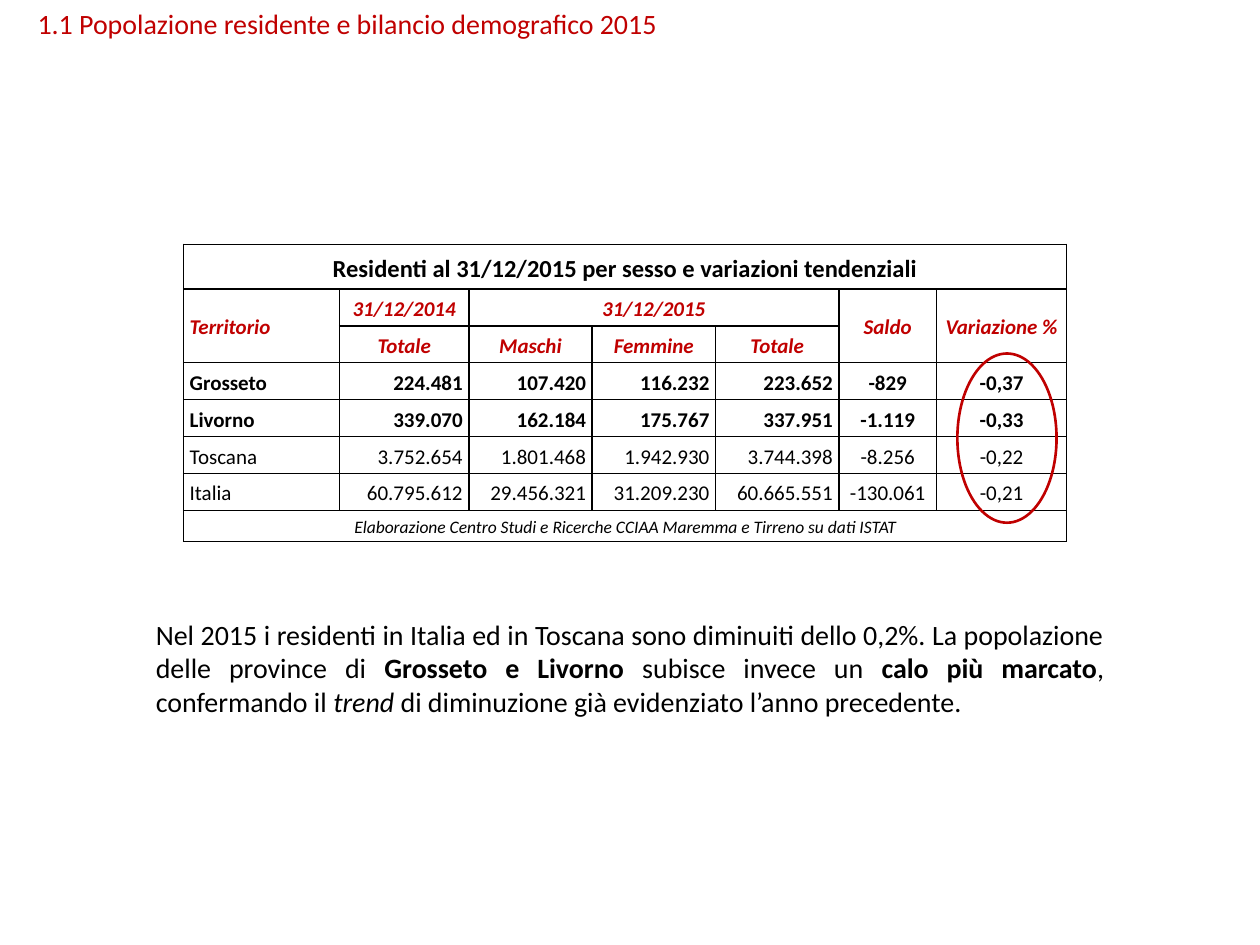
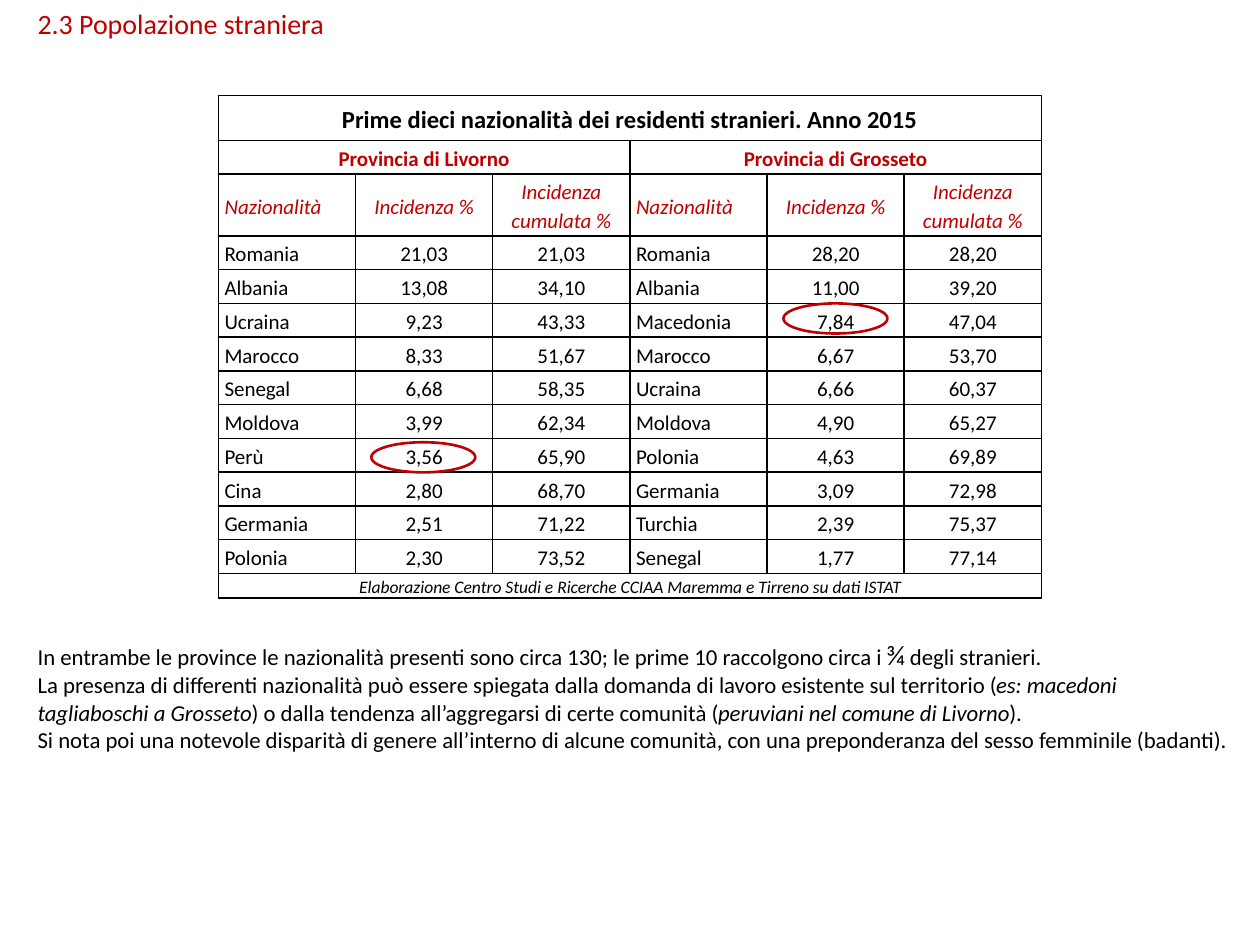
from lxml import etree
from pptx import Presentation
from pptx.dml.color import RGBColor
from pptx.enum.shapes import MSO_SHAPE
from pptx.enum.text import MSO_ANCHOR, MSO_AUTO_SIZE, PP_ALIGN
from pptx.oxml.ns import qn
from pptx.util import Pt

BLACK = RGBColor(0x00, 0x00, 0x00)
RED = RGBColor(0xC0, 0x00, 0x00)
OVAL = MSO_SHAPE.OVAL
MIDDLE = MSO_ANCHOR.MIDDLE
GROW = MSO_AUTO_SIZE.SHAPE_TO_FIT_TEXT
LEFT, JUSTIFY = PP_ALIGN.LEFT, PP_ALIGN.JUSTIFY
ALIGNMENTS = {"l": LEFT, "c": PP_ALIGN.CENTER, "r": PP_ALIGN.RIGHT}

BOLD = {"bold": True}
ITALIC = {"italic": True}
TABLE_TITLE = {"size": Pt(14), "bold": True}
HEADER = {"size": Pt(12), "color": RED}
BODY = {"size": Pt(12)}
NOTE = {"size": Pt(10), "italic": True}
SOURCE = "Elaborazione Centro Studi e Ricerche CCIAA Maremma e Tirreno su dati ISTAT"


class Report:
    def __init__(self):
        self.deck = Presentation()
        self.deck.slide_width, self.deck.slide_height = Pt(720), Pt(540)
        self.page = None

    def add_page(self):
        self.page = self.deck.slides.add_slide(self.deck.slide_layouts[6])

    def fill_para(self, para, spans, alignment, base):
        para.alignment = alignment
        for text, changes in spans:
            span = para.add_run()
            span.text = text
            values = {"name": "Calibri", "bold": False, "italic": False,
                      "color": BLACK, **base, **changes}
            span.font.color.rgb = values.pop("color")
            for name, value in values.items():
                setattr(span.font, name, value)

    def text(self, place, paragraphs, alignment, base):
        box = self.page.shapes.add_textbox(*map(Pt, place))
        frame = box.text_frame
        frame.word_wrap = True
        frame.auto_size = GROW
        for index, spans in enumerate(paragraphs):
            para = frame.add_paragraph() if index else frame.paragraphs[0]
            self.fill_para(para, spans, alignment, base)

    def title(self, text):
        self.text((14.4, 0, 556, 26.6), [[(text, {})]], LEFT,
                  {"size": Pt(16), "color": RED})

    def border(self, cell):
        properties = cell._tc.get_or_add_tcPr()
        for side in ("a:lnL", "a:lnR", "a:lnT", "a:lnB"):
            line = etree.SubElement(properties, qn(side), w=str(Pt(1)))
            fill = etree.SubElement(line, qn("a:solidFill"))
            etree.SubElement(fill, qn("a:srgbClr"), val=str(BLACK))

    def table(self, left, top, widths, heights, rows, merges):
        frame = self.page.shapes.add_table(
            len(rows), len(widths), Pt(left), Pt(top), Pt(sum(widths)), Pt(sum(heights)))
        table = frame.table
        table.first_row = table.horz_banding = False
        for column, width in zip(table.columns, widths):
            column.width = Pt(width)
        for row, height in zip(table.rows, heights):
            row.height = Pt(height)
        for row, (base, alignments, values) in zip(table.rows, rows):
            for cell in row.cells:
                self.border(cell)
                cell.fill.background()
                cell.vertical_anchor = MIDDLE
                cell.margin_left = cell.margin_right = Pt(3.5)
                cell.margin_top = cell.margin_bottom = 0
            for cell, letter, value in zip(row.cells, alignments, values):
                if value:
                    para = cell.text_frame.paragraphs[0]
                    para.line_spacing = 1.15
                    self.fill_para(para, [(value, {})], ALIGNMENTS[letter], base)
        for first_row, first_column, last_row, last_column in merges:
            table.cell(first_row, first_column).merge(table.cell(last_row, last_column))

    def ring(self, *place):
        ring = self.page.shapes.add_shape(OVAL, *map(Pt, place))
        ring.shadow.inherit = False
        ring.fill.background()
        ring.line.color.rgb = RED
        ring.line.width = Pt(1.5)


def residents_page(report):
    report.add_page()
    report.text((82, 349.2, 556, 65.5), [[
        ("Nel 2015 i residenti in Italia ed in Toscana sono diminuiti dello 0,2%. "
         "La popolazione delle province di ", {}),
        ("Grosseto e Livorno ", BOLD),
        ("subisce invece un ", {}),
        ("calo più marcato", BOLD),
        (", confermando il ", {}),
        ("trend", ITALIC),
        (" di diminuzione già evidenziato l’anno precedente.", {}),
    ]], JUSTIFY, {"size": Pt(16)})
    header = {**HEADER, **BOLD, **ITALIC}
    strong = {**BODY, **BOLD}
    columns = "lrrrrcc"
    rows = [
        (TABLE_TITLE, "c", ["Residenti al 31/12/2015 per sesso e variazioni tendenziali"]),
        (header, "lcccccc",
         ["Territorio", "31/12/2014", "31/12/2015", "", "", "Saldo", "Variazione %"]),
        (header, "lcccc", ["", "Totale", "Maschi", "Femmine", "Totale"]),
        (strong, columns,
         ["Grosseto", "224.481", "107.420", "116.232", "223.652", "-829", "-0,37"]),
        (strong, columns,
         ["Livorno", "339.070", "162.184", "175.767", "337.951", "-1.119", "-0,33"]),
        (BODY, columns,
         ["Toscana", "3.752.654", "1.801.468", "1.942.930", "3.744.398", "-8.256", "-0,22"]),
        (BODY, columns,
         ["Italia", "60.795.612", "29.456.321", "31.209.230", "60.665.551", "-130.061", "-0,21"]),
        (NOTE, "c", [SOURCE]),
    ]
    merges = [(0, 0, 0, 6), (1, 0, 2, 0), (1, 2, 1, 4), (1, 5, 2, 5), (1, 6, 2, 6), (7, 0, 7, 6)]
    report.table(104.9, 139.6, [89.2, 73.8, 70.5, 70.5, 70.5, 55.8, 74.4],
                 [25.5] + [21.1] * 6 + [17.9], rows, merges)
    report.title("1.1 Popolazione residente e bilancio demografico 2015")
    report.ring(547.1, 202, 56.7, 96.7)


def foreigners_page(report):
    report.add_page()
    report.text((14.4, 360.7, 705.6, 74.2), [
        [("In entrambe le province le nazionalità presenti sono circa 130; "
          "le prime 10 raccolgono circa i ", {}),
         ("¾", {"size": Pt(16)}),
         (" degli stranieri.", {})],
        [("La presenza di differenti nazionalità può essere spiegata dalla domanda "
          "di lavoro esistente sul territorio (", {}),
         ("es: macedoni", ITALIC)],
        [("tagliaboschi a Grosseto", ITALIC),
         (") o dalla tendenza all’aggregarsi di certe comunità (", {}),
         ("peruviani nel comune di Livorno", ITALIC),
         (").", {})],
        [("Si nota poi una notevole disparità di genere all’interno di alcune comunità, "
          "con una preponderanza del sesso femminile (badanti).", {})],
    ], JUSTIFY, {"size": Pt(13)})
    columns = "lcclcc"
    nationalities = [
        ["Romania", "21,03", "21,03", "Romania", "28,20", "28,20"],
        ["Albania", "13,08", "34,10", "Albania", "11,00", "39,20"],
        ["Ucraina", "9,23", "43,33", "Macedonia", "7,84", "47,04"],
        ["Marocco", "8,33", "51,67", "Marocco", "6,67", "53,70"],
        ["Senegal", "6,68", "58,35", "Ucraina", "6,66", "60,37"],
        ["Moldova", "3,99", "62,34", "Moldova", "4,90", "65,27"],
        ["Perù", "3,56", "65,90", "Polonia", "4,63", "69,89"],
        ["Cina", "2,80", "68,70", "Germania", "3,09", "72,98"],
        ["Germania", "2,51", "71,22", "Turchia", "2,39", "75,37"],
        ["Polonia", "2,30", "73,52", "Senegal", "1,77", "77,14"],
    ]
    rows = [
        (TABLE_TITLE, "c", ["Prime dieci nazionalità dei residenti stranieri. Anno 2015"]),
        ({**HEADER, **BOLD}, "cccc", ["Provincia di Livorno", "", "", "Provincia di Grosseto"]),
        ({**HEADER, **ITALIC}, columns,
         ["Nazionalità", "Incidenza %", "Incidenza cumulata %"] * 2),
        *[(BODY, columns, values) for values in nationalities],
        (NOTE, "c", [SOURCE]),
    ]
    merges = [(0, 0, 0, 5), (1, 0, 1, 2), (1, 3, 1, 5), (13, 0, 13, 5)]
    report.table(124.8, 54.7, [78.4] * 6, [25.5, 19.3, 35.4] + [19.3] * 10 + [14],
                 rows, merges)
    report.title("2.3 Popolazione straniera")
    for left, top in ((447.7, 173.4), (212.2, 252.7)):
        report.ring(left, top, 59.4, 17.2)


def main():
    report = Report()
    residents_page(report)
    foreigners_page(report)
    report.deck.save("out.pptx")


if __name__ == "__main__":
    main()
